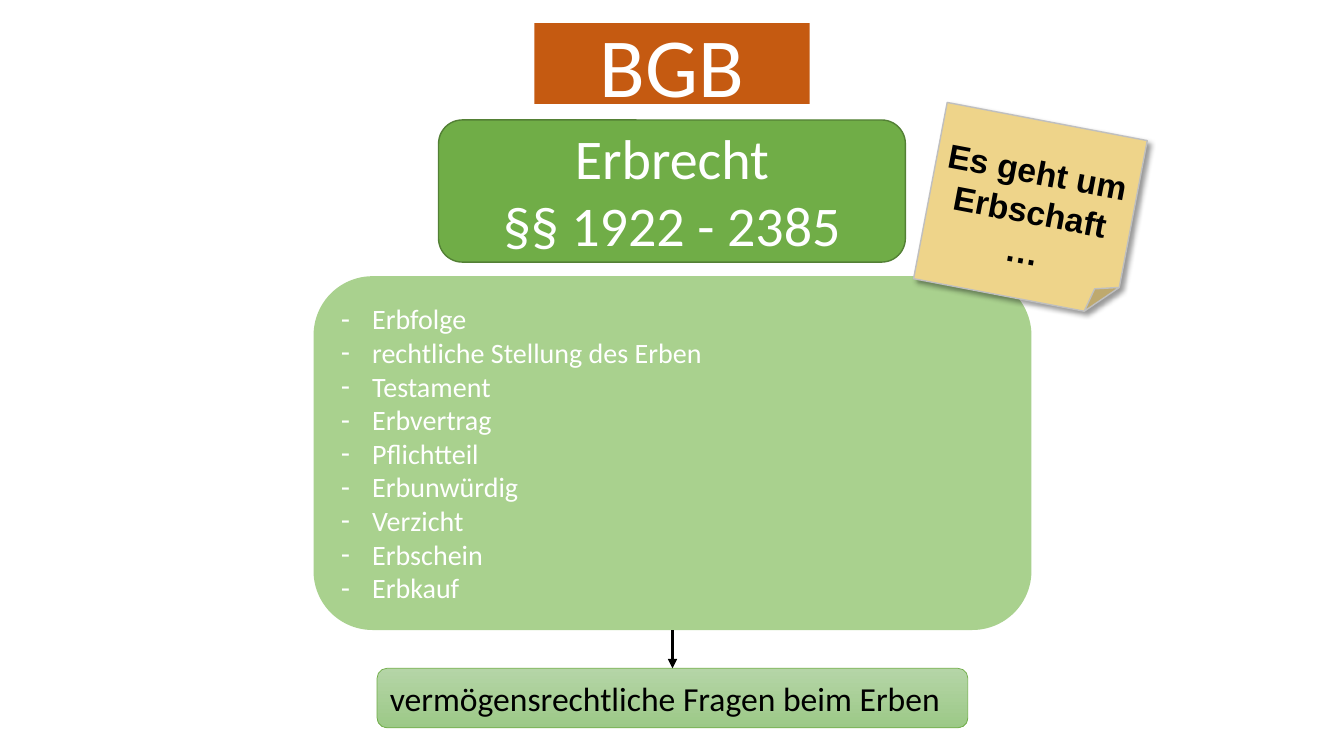
from dataclasses import dataclass

from lxml import etree
from pptx import Presentation
from pptx.dml.color import RGBColor
from pptx.enum.shapes import MSO_CONNECTOR as Connector
from pptx.enum.shapes import MSO_SHAPE as Shape
from pptx.enum.text import MSO_ANCHOR as Anchor
from pptx.enum.text import MSO_AUTO_SIZE as AutoSize
from pptx.enum.text import PP_ALIGN as Align
from pptx.oxml.ns import qn
from pptx.util import Inches, Pt

WHITE, BLACK = "FFFFFF", "000000"
TITLE_AND_CONTENT = 1
BULLET_INDENT = Inches(0.31)


@dataclass(frozen=True)
class Box:
    left: float
    top: float
    width: float
    height: float
    lines: tuple[str, ...]
    size: int
    fill: tuple[str, ...]  # two colours make a vertical gradient
    outline: str | None = None
    outline_width: float = 1
    color: str = WHITE
    font: str = "Calibri"
    bold: bool = False
    align: Align = Align.CENTER


CODE = Box(5.3, 0.23, 2.73, 0.8, ("BGB",), 60, ("C55A11",))
LAW = Box(4.35, 1.19, 4.63, 1.41, ("Erbrecht", "§§ 1922 - 2385"), 40,
          ("70AD47",), "538035")
TOPICS = Box(3.11, 2.74, 7.12, 3.51,
             ("Erbfolge", "rechtliche Stellung des Erben", "Testament",
              "Erbvertrag", "Pflichtteil", "Erbunwürdig", "Verzicht",
              "Erbschein", "Erbkauf"),
             20, ("A9D18E",), align=Align.LEFT)
SUMMARY = Box(3.74, 6.63, 5.86, 0.59,
              ("vermögensrechtliche Fragen beim Erben",), 24,
              ("B5D5A7", "9CC987"), "70AD47", 0.5, BLACK, align=Align.LEFT)
NOTE = Box(9.21, 1.19, 2.02, 1.78, ("Es geht um Erbschaft…",), 24,
           ("EED48A",), "BFBFBF", 1, BLACK, "Arial", True)


def rgb(value: str) -> RGBColor:
    return RGBColor.from_string(value)


def add_xml(parent, tag: str, **attributes: str):
    return etree.SubElement(parent, qn(tag), attributes)


def format_box(shape, box: Box) -> None:
    """Place a shape, colour it and write its text."""
    shape.left, shape.top = Inches(box.left), Inches(box.top)
    shape.width, shape.height = Inches(box.width), Inches(box.height)

    if len(box.fill) == 1:
        shape.fill.solid()
        shape.fill.fore_color.rgb = rgb(box.fill[0])
    else:
        shape.fill.gradient()
        shape.fill.gradient_angle = 270
        for stop, color in zip(shape.fill.gradient_stops, box.fill):
            stop.color.rgb = rgb(color)
    if box.outline:
        shape.line.color.rgb = rgb(box.outline)
        shape.line.width = Pt(box.outline_width)
    else:
        shape.line.fill.background()

    frame = shape.text_frame
    frame.text = "\n".join(box.lines)
    frame.word_wrap = True
    frame.auto_size = AutoSize.NONE
    frame.vertical_anchor = Anchor.MIDDLE
    for paragraph in frame.paragraphs:
        paragraph.alignment = box.align
        paragraph.space_before = Pt(0)
        for run in paragraph.runs:
            run.font.name = box.font
            run.font.size = Pt(box.size)
            run.font.bold = box.bold
            run.font.color.rgb = rgb(box.color)


def fill_placeholder(placeholder, box: Box) -> None:
    """Give a placeholder rounded corners and the look of a box."""
    format_box(placeholder, box)
    properties = placeholder.element.spPr
    geometry = add_xml(properties, "a:prstGeom", prst="roundRect")
    add_xml(geometry, "a:avLst")
    properties.find(qn("a:xfrm")).addnext(geometry)


def add_box(slide, box: Box, kind: Shape = Shape.ROUNDED_RECTANGLE):
    shape = slide.shapes.add_shape(kind, 0, 0, 0, 0)
    format_box(shape, box)
    shape.shadow.inherit = False
    return shape


def add_dashes(frame) -> None:
    for paragraph in frame.paragraphs:
        properties = paragraph._p.get_or_add_pPr()
        properties.set("marL", str(BULLET_INDENT))
        properties.set("indent", str(-BULLET_INDENT))
        add_xml(properties, "a:buChar", char="-")


def add_arrow(slide, source, target) -> None:
    """Lead from the bottom of one box to the top of the next."""
    arrow = slide.shapes.add_connector(Connector.STRAIGHT, 0, 0, 0, 0)
    arrow.begin_connect(source, 2)
    arrow.end_connect(target, 0)
    arrow.line.color.rgb = rgb(BLACK)
    arrow.line.width = Pt(2.25)
    add_xml(arrow.line._get_or_add_ln(), "a:tailEnd", type="triangle")
    add_xml(arrow._element.spPr, "a:effectLst")


def add_note(slide) -> None:
    note = add_box(slide, NOTE, Shape.FOLDED_CORNER)
    note.rotation = 10.8
    note.text_frame.margin_top = Inches(0.32)
    note.text_frame.margin_bottom = 0
    effects = note._element.spPr.find(qn("a:effectLst"))
    shadow = add_xml(effects, "a:outerShdw", blurRad=str(Pt(4)),
                     dist=str(Pt(3)), dir="2700000", algn="tl",
                     rotWithShape="0")
    color = add_xml(shadow, "a:srgbClr", val=BLACK)
    add_xml(color, "a:alpha", val="40000")


def main() -> None:
    deck = Presentation()
    deck.slide_width, deck.slide_height = Inches(13.33), Inches(7.5)
    slide = deck.slides.add_slide(deck.slide_layouts[TITLE_AND_CONTENT])

    # Code and the book of law within it
    fill_placeholder(slide.shapes.title, CODE)
    add_box(slide, LAW)

    # Topics, leading to the summary
    topics = slide.placeholders[1]
    fill_placeholder(topics, TOPICS)
    add_dashes(topics.text_frame)
    summary = add_box(slide, SUMMARY)
    add_arrow(slide, topics, summary)

    # Sticky note
    add_note(slide)

    deck.save("out.pptx")


if __name__ == "__main__":
    main()
